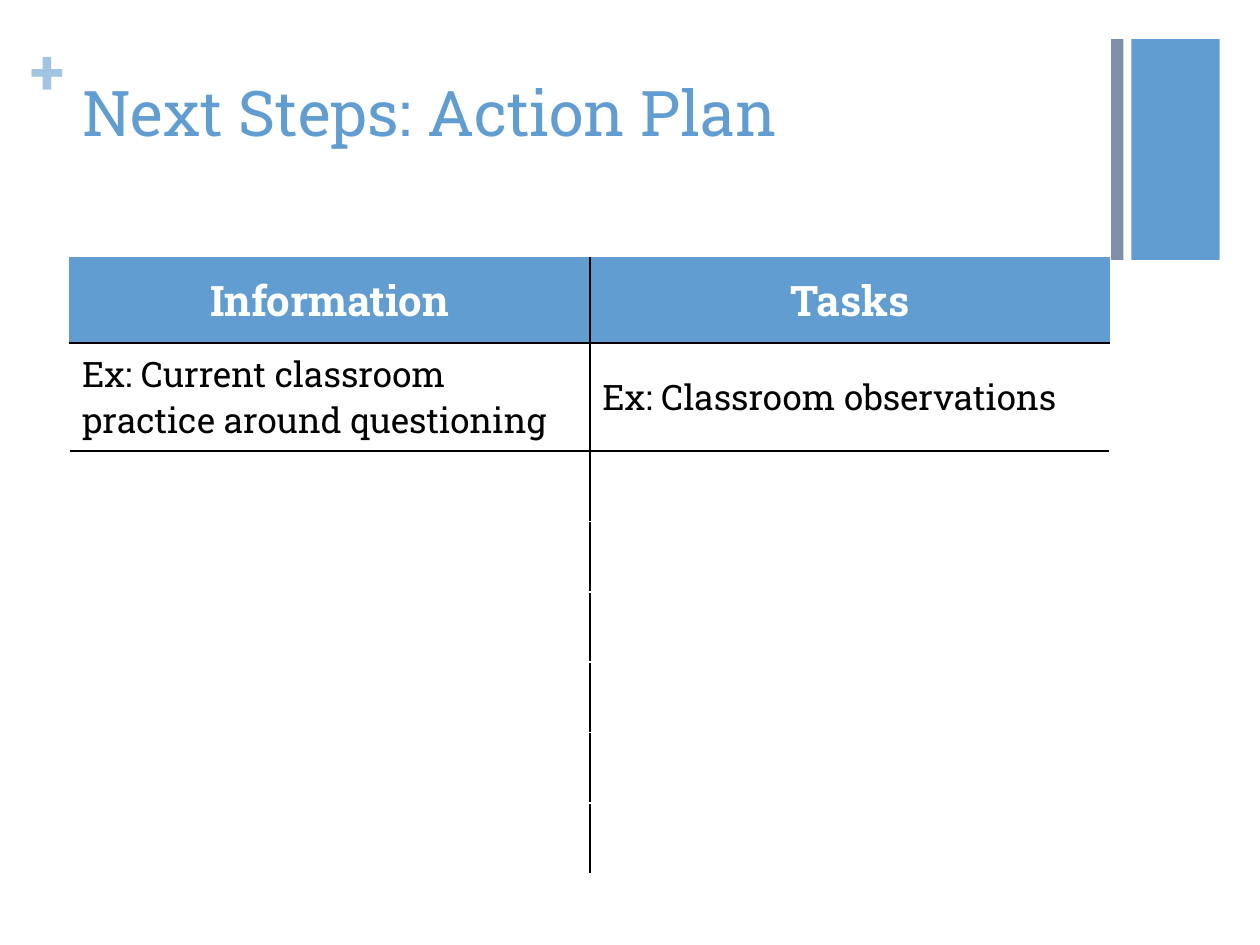
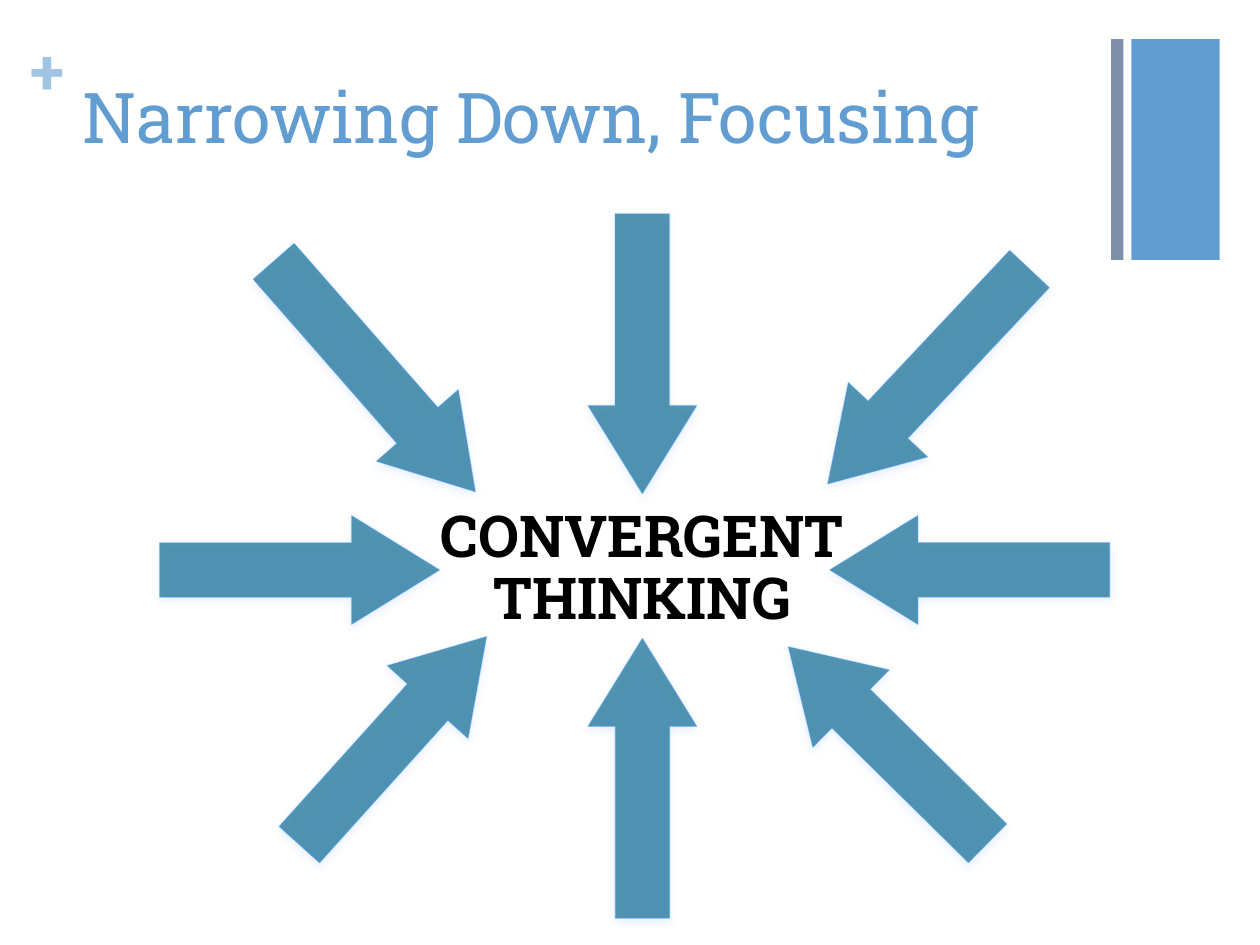
from dataclasses import dataclass

from lxml import etree
from pptx import Presentation
from pptx.dml.color import RGBColor
from pptx.enum.shapes import MSO_SHAPE
from pptx.enum.text import MSO_ANCHOR, MSO_AUTO_SIZE, PP_ALIGN
from pptx.oxml.ns import qn
from pptx.util import Cm, Pt

RECT = MSO_SHAPE.RECTANGLE
ARROW = MSO_SHAPE.LEFT_ARROW
TOP, MIDDLE, BOTTOM = MSO_ANCHOR.TOP, MSO_ANCHOR.MIDDLE, MSO_ANCHOR.BOTTOM
LEFT, CENTER = PP_ALIGN.LEFT, PP_ALIGN.CENTER
FIXED = MSO_AUTO_SIZE.NONE
PLAIN = "{2D5ABB26-0587-4C30-8999-92F81FD0307C}"


@dataclass(frozen=True)
class Theme:
    font: str = "Roboto Slab"
    blue: str = "629DD1"
    pale: str = "A1C4E3"
    slate: str = "7F8FA9"
    teal: str = "2C7C9F"
    rim: str = "3A93FF"
    glow: str = "ACCBF9"
    ink: str = "000000"
    white: str = "FFFFFF"
    title: int = 36
    large: int = 40
    mark: int = 36
    label: int = 33
    head: int = 24
    body: int = 20


THEME = Theme()
TITLE = (1.4, 1.35, 20.98, 3.1)
TABLE = (1.4, 5.18, 20.98, 12.42)
RING = (3.23, 4.3, 19.44, 14.38)
ROWS = (1.73, 2.18) + (1.42,) * 6
PLAN = (
    ("Information", "Tasks"),
    ("Ex: Current classroom practice around questioning",
     "Ex: Classroom observations"),
)
THICK = 2.19
LONG = 5.64
ARROWS = (
    (-5.4, -3.9, 6.17, 228.8),
    (-6.91, 0, LONG, 180),
    (6.6, 0, LONG, 0),
    (0, -4.36, LONG, 270),
    (5.77, -3.9, 5.94, 313.2),
    (-5.03, 3.44, LONG, 132),
    (0, 4.2, LONG, 90),
    (4.95, 3.53, LONG, 44.6),
)


def tint(code):
    return RGBColor.from_string(code)


def write(frame, text, size, color=THEME.ink, bold=False, align=LEFT, space=1.0):
    frame.word_wrap = True
    for i, line in enumerate(text.split("\n")):
        para = frame.add_paragraph() if i else frame.paragraphs[0]
        para.alignment = align
        para.line_spacing = space
        run = para.add_run()
        run.text = line
        font = run.font
        font.name, font.size, font.bold = THEME.font, Pt(size), bold
        font.color.rgb = tint(color)


def fade(color, share):
    node = color.find(".//" + qn("a:srgbClr"))
    etree.SubElement(node, qn("a:alpha"), val=str(share * 1000))


def shape(slide, kind, box, fill):
    item = slide.shapes.add_shape(kind, *map(Cm, box))
    item.shadow.inherit = False
    item.fill.solid()
    item.fill.fore_color.rgb = tint(fill)
    item.line.fill.background()
    return item


def label(slide, box, text, anchor=TOP, inset=None, **style):
    frame = slide.shapes.add_textbox(*map(Cm, box)).text_frame
    frame.vertical_anchor = anchor
    if inset is not None:
        frame.margin_left = frame.margin_right = Cm(inset)
        frame.margin_top = frame.margin_bottom = Cm(inset)
    write(frame, text, **style)


def start(deck, text, size):
    slide = deck.slides.add_slide(deck.slide_layouts[5])
    shape(slide, RECT, (22.81, 0.79, 1.78, 4.45), THEME.blue)
    shape(slide, RECT, (22.4, 0.79, 0.25, 4.45), THEME.slate)
    label(slide, (0.61, 0.64, 0.74, 1.55), "+", inset=0,
          size=THEME.mark, color=THEME.pale, bold=True)
    title = slide.shapes.title
    title.left, title.top, title.width, title.height = map(Cm, TITLE)
    frame = title.text_frame
    frame.auto_size = FIXED
    frame.vertical_anchor = TOP
    write(frame, text, size, THEME.blue)
    return slide


def edges(row, col):
    inner, outer = ("R", "L") if col == 0 else ("L", "R")
    marks = {inner: THEME.ink}
    if row == 0:
        marks["B"] = THEME.ink
    elif row == 1:
        marks["T"] = THEME.ink
    else:
        marks[outer] = marks["B"] = THEME.white
        if row > 2:
            marks["T"] = THEME.white
    return marks


def border(cell, marks):
    props = cell._tc.get_or_add_tcPr()
    sides = [side for side in "LRTB" if side in marks]
    for i, side in enumerate(sides):
        line = etree.Element(qn("a:ln" + side), w=str(Pt(1)))
        fill = etree.SubElement(line, qn("a:solidFill"))
        etree.SubElement(fill, qn("a:srgbClr"), val=marks[side])
        props.insert(i, line)


def grid(slide, box):
    frame = slide.shapes.add_table(len(ROWS), 2, *map(Cm, box))
    next(frame.element.iter(qn("a:tableStyleId"))).text = PLAIN
    table = frame.table
    for col in table.columns:
        col.width = Cm(box[2] / 2)
    for r, height in enumerate(ROWS):
        table.rows[r].height = Cm(height)
        for c in range(2):
            cell = table.cell(r, c)
            cell.vertical_anchor = MIDDLE
            if r == 0:
                cell.fill.solid()
                cell.fill.fore_color.rgb = tint(THEME.blue)
                write(cell.text_frame, PLAN[r][c], THEME.head,
                      THEME.white, bold=True, align=CENTER)
            else:
                cell.fill.background()
                if r < len(PLAN):
                    write(cell.text_frame, PLAN[r][c], THEME.body)
            border(cell, edges(r, c))


def arrow(slide, x, y, length, angle):
    box = (x - length / 2, y - THICK / 2, length, THICK)
    item = shape(slide, ARROW, box, THEME.teal)
    item.rotation = angle
    item.adjustments[0], item.adjustments[1] = 0.5, 0.81
    item.line.color.rgb = tint(THEME.rim)
    item.line.width = Pt(0.75)
    props = item.element.spPr
    fade(props.find(qn("a:solidFill")), 81)
    fade(props.find(qn("a:ln")), 34)
    glow = etree.SubElement(
        props.find(qn("a:effectLst")), qn("a:outerShdw"),
        blurRad=str(Pt(5)), dist=str(Pt(1.8)), dir="5400000", rotWithShape="0")
    etree.SubElement(glow, qn("a:srgbClr"), val=THEME.glow)
    fade(glow, 35)


def ring(slide, box, text):
    left, top, width, height = box
    x, y = left + width / 2, top + height / 2
    for dx, dy, length, angle in ARROWS:
        arrow(slide, x + dx, y + dy, length, angle)
    label(slide, (x - 4.98, y - 2.12, 9.96, 3.5), text, anchor=BOTTOM,
          size=THEME.label, bold=True, align=CENTER, space=0.9)


def main():
    deck = Presentation()
    deck.slide_width, deck.slide_height = Cm(25.4), Cm(19.05)
    grid(start(deck, "Next Steps: Action Plan", THEME.title), TABLE)
    ring(start(deck, "Narrowing Down, Focusing", THEME.large), RING,
         "CONVERGENT\nTHINKING")
    deck.save("out.pptx")


if __name__ == "__main__":
    main()
